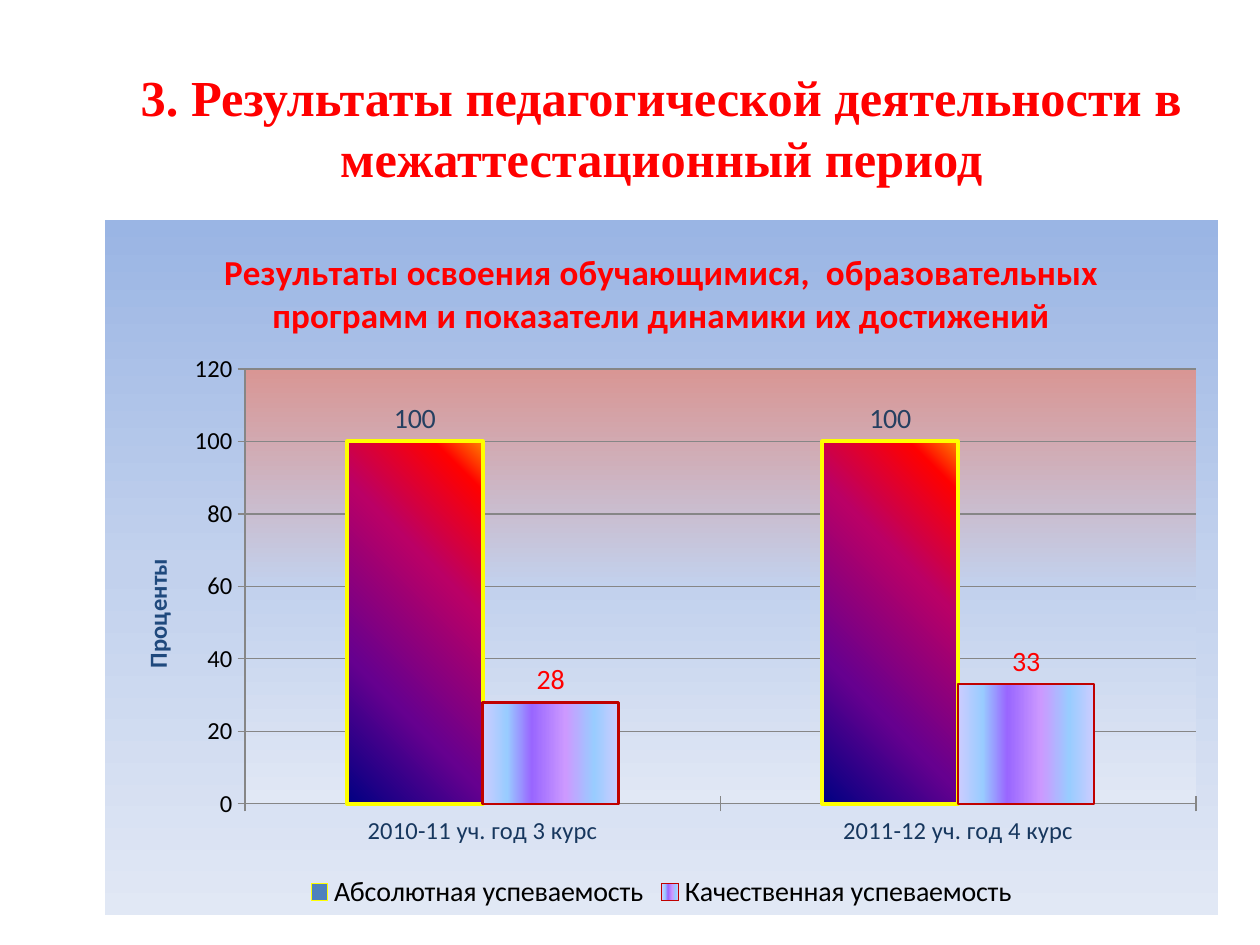
from lxml import etree
from pptx import Presentation
from pptx.chart.data import CategoryChartData
from pptx.dml.color import RGBColor
from pptx.enum.chart import XL_CHART_TYPE, XL_LABEL_POSITION, XL_LEGEND_POSITION, XL_TICK_MARK
from pptx.enum.text import MSO_ANCHOR, PP_ALIGN
from pptx.oxml.ns import qn
from pptx.util import Emu, Pt

COLUMN = XL_CHART_TYPE.COLUMN_CLUSTERED
OUTSIDE_END = XL_LABEL_POSITION.OUTSIDE_END
BOTTOM = XL_LEGEND_POSITION.BOTTOM
CROSS = XL_TICK_MARK.CROSS
MIDDLE = MSO_ANCHOR.MIDDLE
CENTER = PP_ALIGN.CENTER

RED = RGBColor(0xFF, 0x00, 0x00)
BLACK = RGBColor(0x00, 0x00, 0x00)
GREY = RGBColor(0x86, 0x86, 0x86)
NAVY = RGBColor(0x17, 0x37, 0x5E)
AXIS_BLUE = RGBColor(0x1F, 0x49, 0x7D)
LABEL_BLUE = RGBColor(0x25, 0x40, 0x61)
BAR_BLUE = RGBColor(0x4F, 0x81, 0xBD)
YELLOW = RGBColor(0xFF, 0xFF, 0x00)
DARK_RED = RGBColor(0xC0, 0x00, 0x00)
ROSE = RGBColor(0xD9, 0x96, 0x94)
SKY = RGBColor(0x9A, 0xB5, 0xE4)
PALE = RGBColor(0xC2, 0xD1, 0xED)
MIST = RGBColor(0xE1, 0xE8, 0xF5)
INDIGO = RGBColor(0x00, 0x00, 0x82)
PURPLE = RGBColor(0x66, 0x00, 0x8F)
CRIMSON = RGBColor(0xBA, 0x00, 0x66)
ORANGE = RGBColor(0xFF, 0x82, 0x00)
LAVENDER = RGBColor(0xCC, 0xCC, 0xFF)
LIGHT_BLUE = RGBColor(0x99, 0xCC, 0xFF)
VIOLET = RGBColor(0x99, 0x66, 0xFF)
LILAC = RGBColor(0xCC, 0x99, 0xFF)

CHART_BACK = [(0, SKY), (50, PALE), (100, MIST)]
PLOT_BACK = [(0, ROSE), (50, PALE), (100, MIST)]
FIRE = [(0, INDIGO), (30, PURPLE), (65, CRIMSON), (90, RED), (100, ORANGE)]
PEARL = [(0, LAVENDER), (18, LIGHT_BLUE), (36, VIOLET), (61, LILAC),
         (82, LIGHT_BLUE), (100, LAVENDER)]


class Deck:
    SCALE = 914400 / 126
    FONT = "Calibri"
    HEAD_FONT = "Times New Roman"

    def __init__(self, width, height):
        self.prs = Presentation()
        self.prs.slide_width, self.prs.slide_height = self.px(width, height)
        self.s = self.prs.slides.add_slide(self.prs.slide_layouts[5])

    def px(self, *lengths):
        return [Emu(round(n * self.SCALE)) for n in lengths]

    def style(self, font, size, color, bold=False, name=FONT):
        font.name, font.size, font.bold = name, Pt(size), bold
        font.color.rgb = color

    def text(self, tf, words, *style):
        p = tf.paragraphs[0]
        p.alignment = CENTER
        r = p.add_run()
        r.text = words
        self.style(r.font, *style)

    def title(self, words, box):
        sp = self.s.shapes.title
        sp.left, sp.top, sp.width, sp.height = self.px(*box)
        tf = sp.text_frame
        tf.word_wrap = True
        tf.vertical_anchor = MIDDLE
        self.text(tf, words, 28.8, RED, True, self.HEAD_FONT)

    def chart(self, cats, series, box):
        data = CategoryChartData()
        data.categories = cats
        for name, values in series:
            data.add_series(name, values)
        self.box = box
        chart = self.s.shapes.add_chart(COLUMN, *self.px(*box), data).chart
        self.style(chart.font, 10, BLACK)
        plot = chart.plots[0]
        plot.vary_by_categories = False
        plot.gap_width, plot.overlap = 150, 0
        chart.has_legend = True
        chart.legend.position = BOTTOM
        chart.legend.include_in_layout = False
        self.style(chart.legend.font, 16, BLACK)
        return chart

    def axis(self, axis, color, grid):
        axis.major_tick_mark = CROSS
        axis.has_major_gridlines = grid
        self.style(axis.tick_labels.font, 14, color)
        axis.format.line.color.rgb = GREY
        if grid:
            axis.major_gridlines.format.line.color.rgb = GREY

    def outline(self, fmt, color, width):
        fmt.line.color.rgb = color
        fmt.line.width = Pt(width)

    def labels(self, series, color):
        labels = series.data_labels
        labels.show_value = True
        labels.position = OUTSIDE_END
        self.style(labels.font, 16, color)

    def gradient(self, sp_pr, stops, angle):
        grad = etree.Element(qn("a:gradFill"), rotWithShape="1")
        stop_list = etree.SubElement(grad, qn("a:gsLst"))
        for place, color in stops:
            gs = etree.SubElement(stop_list, qn("a:gs"), pos=str(place * 1000))
            etree.SubElement(gs, qn("a:srgbClr"), val=str(color))
        etree.SubElement(grad, qn("a:lin"), ang=str(angle * 60000), scaled="0")
        sp_pr.insert(0, grad)

    def place(self, parent, x, y, w=None, h=None):
        layout = parent.find(qn("c:layout"))
        if layout is None:
            layout = etree.Element(qn("c:layout"))
            parent.insert(0, layout)
        manual = etree.SubElement(layout, qn("c:manualLayout"))
        left, top, width, height = self.box
        values = {"xMode": "edge", "yMode": "edge",
                  "x": (x - left) / width, "y": (y - top) / height}
        if w:
            etree.SubElement(manual, qn("c:layoutTarget"), val="inner")
            values.update(w=w / width, h=h / height)
        for tag, value in values.items():
            etree.SubElement(manual, qn("c:" + tag), val=str(value))


def main():
    deck = Deck(1260, 945)
    deck.title("3. Результаты педагогической деятельности в межаттестационный период",
               (105, 59, 1113, 136))

    chart = deck.chart(
        ["2010-11 уч. год 3 курс", "2011-12 уч. год 4 курс"],
        [("Абсолютная успеваемость", (100, 100)),
         ("Качественная успеваемость", (28, 33))],
        (105, 220, 1113, 695))
    chart.has_title = True
    deck.text(chart.chart_title.text_frame,
              "Результаты освоения обучающимися,  образовательных программ "
              "и показатели динамики их достижений", 20, RED, True)

    deck.axis(chart.category_axis, NAVY, False)
    values = chart.value_axis
    deck.axis(values, BLACK, True)
    values.minimum_scale, values.maximum_scale, values.major_unit = 0, 120, 20
    values.has_title = True
    deck.text(values.axis_title.text_frame, "Проценты", 14, AXIS_BLUE, True)

    absolute, quality = chart.plots[0].series
    absolute.format.fill.solid()
    absolute.format.fill.fore_color.rgb = BAR_BLUE
    deck.outline(absolute.format, YELLOW, 2.25)
    for i in range(2):
        deck.outline(absolute.points[i].format, YELLOW, 2.25)
    deck.outline(quality.format, DARK_RED, 1.5)
    deck.labels(absolute, LABEL_BLUE)
    deck.labels(quality, RED)

    root = chart.element
    plot_area = root.xpath("c:chart/c:plotArea")[0]
    for sp_pr in plot_area.xpath(".//c:dPt/c:spPr"):
        deck.gradient(sp_pr, FIRE, 315)
    deck.gradient(plot_area.xpath(".//c:ser[2]/c:spPr")[0], PEARL, 0)
    deck.gradient(etree.SubElement(plot_area, qn("c:spPr")), PLOT_BACK, 90)
    back = etree.Element(qn("c:spPr"))
    root.find(qn("c:chart")).addnext(back)
    deck.gradient(back, CHART_BACK, 90)

    deck.place(plot_area, 245, 369, 951, 435)
    deck.place(plot_area.xpath("c:valAx/c:title")[0], 136, 554)

    deck.prs.save("out.pptx")


if __name__ == "__main__":
    main()
